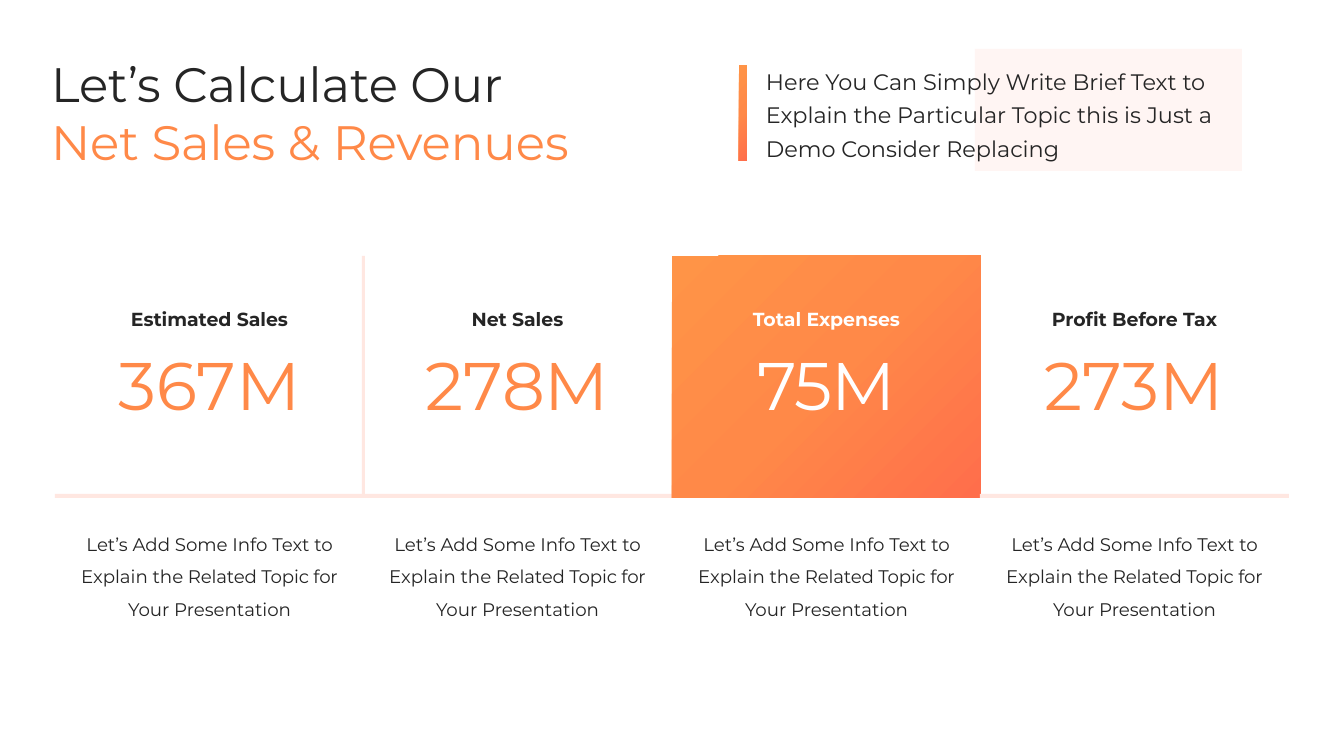
from copy import deepcopy

from pptx import Presentation
from pptx.dml.color import RGBColor
from pptx.enum.shapes import MSO_SHAPE
from pptx.enum.text import MSO_ANCHOR, MSO_AUTO_SIZE, PP_ALIGN
from pptx.util import Pt

PX = 914400 / 100.8
FONT = "Montserrat"
COLORS = {
    "ink": "252525",
    "white": "FFFFFF",
    "orange": "FF8948",
    "blush": "FFF5F3",
    "rule": "FFE7E1",
}
GRADIENT = ["FF9447", "FF8948", "FF6E4B"]


def add_block(box, fill):
    block = slide.shapes.add_shape(MSO_SHAPE.RECTANGLE, *[round(v * PX) for v in box])
    block.shadow.inherit = False
    block.line.fill.background()
    if fill != "gradient":
        block.fill.solid()
        block.fill.fore_color.rgb = RGBColor.from_string(COLORS[fill])
        return
    block.fill.gradient()
    block.fill.gradient_angle = 315
    last_stop = block._element.spPr.xpath("./a:gradFill/a:gsLst/a:gs")[-1]
    last_stop.addprevious(deepcopy(last_stop))
    for index, stop in enumerate(block.fill.gradient_stops):
        stop.position = index / 2
        stop.color.rgb = RGBColor.from_string(GRADIENT[index])


def add_text(box, lines, size, align=PP_ALIGN.LEFT, bold=False, leading=None, holder=None):
    holder = holder or slide.shapes.add_textbox(0, 0, 0, 0)
    holder.left, holder.top, holder.width, holder.height = [round(v * PX) for v in box]
    frame = holder.text_frame
    frame.word_wrap = False
    frame.auto_size = MSO_AUTO_SIZE.NONE
    frame.vertical_anchor = MSO_ANCHOR.TOP
    for index, line in enumerate(lines):
        paragraph = frame.paragraphs[0] if index == 0 else frame.add_paragraph()
        paragraph.alignment = align
        paragraph.line_spacing = leading
        for text, color, tracking in line:
            run = paragraph.add_run()
            run.text = text
            run.font.name = FONT
            run.font.size = Pt(size)
            run.font.bold = bold
            run.font.color.rgb = RGBColor.from_string(COLORS[color])
            if tracking:
                run.font._element.set("spc", str(tracking))


deck = Presentation()
deck.slide_width, deck.slide_height = round(1344 * PX), round(756 * PX)
slide = deck.slides.add_slide(deck.slide_layouts[5])

headline = [[("Let’s Calculate Our", "ink", 0)], [("Net Sales & Revenues", "orange", 0)]]
add_text((41, 49, 582, 127), headline, 34.5, holder=slide.shapes.title)

add_block((975, 49, 267, 122), "blush")
add_block((739, 65, 8, 96), "gradient")
summary = [
    "Here You Can Simply Write Brief Text to",
    "Explain the Particular Topic this is Just a",
    "Demo Consider Replacing",
]
add_text((756, 56, 478, 109), [[(line, "ink", 0)] for line in summary], 16, leading=Pt(24))

metrics = [
    ("Estimated Sales", "367M"),
    ("Net Sales", "278M"),
    ("Total Expenses", "75M"),
    ("Profit Before Tax", "273M"),
]
info = [
    [("Let’s Add Some Info Text to", "ink", 0)],
    [("Explain the ", "ink", 0), ("Related Topic for", "ink", -10)],
    [("Your Presentation", "ink", 0)],
]
column_width = 309
for index, (label, value) in enumerate(metrics):
    left = 55 + index * 617 // 2
    highlighted = label == "Total Expenses"
    if highlighted:
        add_block((left, 256, column_width, 242), "gradient")
    else:
        add_block((left, 494, column_width, 4), "rule")
    if index == 0:
        add_block((left + column_width - 2, 256, 3, 242), "rule")
    label_color, value_color, tracking = ("white", "white", -100) if highlighted else ("ink", "orange", 0)
    add_text((left, 303, column_width, 33), [[(label, label_color, 0)]], 13.5, PP_ALIGN.CENTER, True)
    add_text((left, 338, column_width, 92), [[(value, value_color, tracking)]], 48, PP_ALIGN.CENTER)
    add_text((left, 517, column_width, 106), info, 13, PP_ALIGN.CENTER, leading=1.5)

deck.save("out.pptx")
